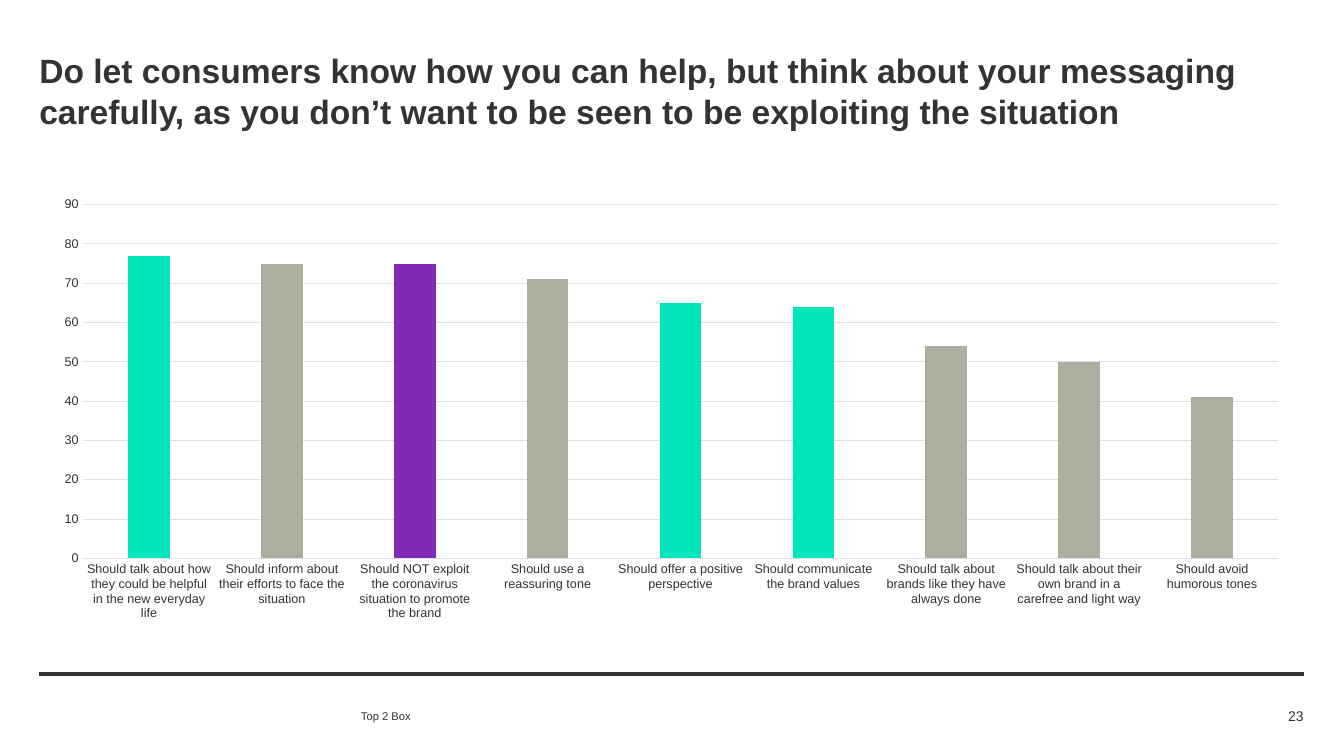
from lxml import etree
from pptx import Presentation
from pptx.chart.data import CategoryChartData
from pptx.dml.color import RGBColor
from pptx.enum.chart import XL_CHART_TYPE as ChartType, XL_TICK_MARK as TickMark
from pptx.enum.shapes import MSO_CONNECTOR as Connector
from pptx.enum.text import MSO_ANCHOR as Anchor, PP_ALIGN as Align
from pptx.oxml.ns import qn
from pptx.util import Inches, Pt

INK = RGBColor(0x33, 0x33, 0x33)
GRID = RGBColor(0xE0, 0xE0, 0xE0)
STONE = RGBColor(0xAE, 0xAE, 0x9F)
MINT = RGBColor(0x00, 0xE5, 0xBA)
PURPLE = RGBColor(0x80, 0x2A, 0xB7)

LEFT, WIDTH = 0.39, 12.54

# Statement, share of agreement, bar colour
STATEMENTS = [
    ("Should talk about how they could be helpful in the new everyday life", 77, MINT),
    ("Should inform about their efforts to face the situation", 75, STONE),
    ("Should NOT exploit the coronavirus situation to promote the brand", 75, PURPLE),
    ("Should use a reassuring tone", 71, STONE),
    ("Should offer a positive perspective", 65, MINT),
    ("Should communicate the brand values", 64, MINT),
    ("Should talk about brands like they have always done", 54, STONE),
    ("Should talk about their own brand in a carefree and light way", 50, STONE),
    ("Should avoid humorous tones", 41, STONE),
]


class SlideBuilder:
    def __init__(self, slide, font_name="Arial", color=INK):
        self.slide = slide
        self.font_name = font_name
        self.color = color

    def style_font(self, font, size, bold=False):
        for name, value in dict(name=self.font_name, size=Pt(size), bold=bold).items():
            setattr(font, name, value)
        font.color.rgb = self.color

    def text(self, words, box, size, bold=False, align=Align.LEFT, anchor=Anchor.MIDDLE):
        frame = self.slide.shapes.add_textbox(*map(Inches, box)).text_frame
        settings = dict(word_wrap=True, vertical_anchor=anchor, margin_left=0,
                        margin_right=0, margin_top=0, margin_bottom=0)
        for name, value in settings.items():
            setattr(frame, name, value)
        paragraph = frame.paragraphs[0]
        paragraph.alignment = align
        run = paragraph.add_run()
        run.text = words
        self.style_font(run.font, size, bold)

    def rule(self, left, top, width, weight):
        line = self.slide.shapes.add_connector(
            Connector.STRAIGHT, Inches(left), Inches(top), Inches(left + width), Inches(top))
        line.line.color.rgb = self.color
        line.line.width = Pt(weight)
        etree.SubElement(line.element.spPr, qn("a:effectLst"))

    def column_chart(self, statements, box):
        labels, shares, colors = zip(*statements)
        data = CategoryChartData(number_format="General")
        data.categories = labels
        data.add_series("Series 1", shares)
        chart = self.slide.shapes.add_chart(
            ChartType.COLUMN_CLUSTERED, *map(Inches, box), data).chart
        chart.has_legend = chart.has_title = False
        self.style_font(chart.font, 10)

        for axis in (chart.category_axis, chart.value_axis):
            axis.major_tick_mark = axis.minor_tick_mark = TickMark.NONE
            self.style_font(axis.tick_labels.font, 9)
        scale = dict(minimum_scale=0, maximum_scale=90, major_unit=10,
                     has_major_gridlines=True)
        for name, value in scale.items():
            setattr(chart.value_axis, name, value)
        chart.value_axis.format.line.fill.background()
        for owner in (chart.category_axis, chart.value_axis.major_gridlines):
            owner.format.line.color.rgb = GRID
            owner.format.line.width = Pt(0.75)

        plot = chart.plots[0]
        for name, value in dict(gap_width=219, overlap=-27, vary_by_categories=False).items():
            setattr(plot, name, value)
        series = plot.series[0]
        series.format.fill.solid()
        series.format.fill.fore_color.rgb = STONE
        for index, color in enumerate(colors):
            if color != STONE:
                fill = series.points[index].format.fill
                fill.solid()
                fill.fore_color.rgb = color


def main():
    deck = Presentation()
    deck.slide_width, deck.slide_height = Inches(13.33), Inches(7.5)
    builder = SlideBuilder(deck.slides.add_slide(deck.slide_layouts[6]))

    builder.rule(LEFT, 6.69, WIDTH, 3)
    builder.text("Do let consumers know how you can help, but think about your messaging "
                 "carefully, as you don’t want to be seen to be exploiting the situation",
                 (LEFT, 0.5, WIDTH, 0.8), 24, bold=True, anchor=Anchor.TOP)
    builder.text("Top 2 Box", (3.58, 6.99, 8.2, 0.22), 8)
    builder.column_chart(STATEMENTS, (LEFT, 1.87, WIDTH, 4.38))
    builder.text("23", (11.87, 6.99, 1.06, 0.22), 10, align=Align.RIGHT)

    deck.save("out.pptx")


if __name__ == "__main__":
    main()
